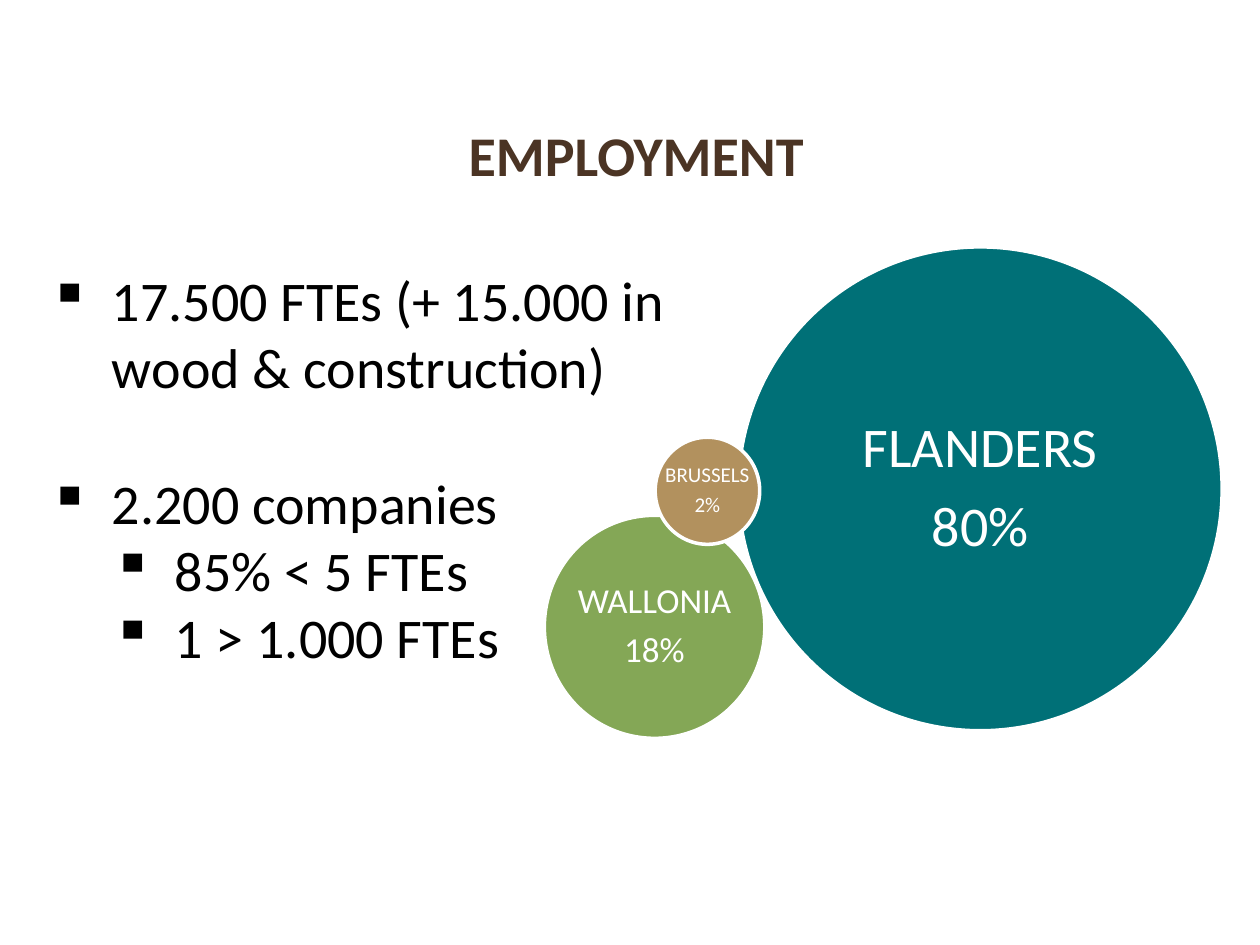
from pptx import Presentation
from pptx.dml.color import RGBColor
from pptx.enum.shapes import MSO_SHAPE
from pptx.enum.text import MSO_ANCHOR, PP_ALIGN
from pptx.oxml.ns import qn
from pptx.util import Inches, Pt
from lxml import etree

FONT = "Calibri"
WHITE, BLACK, BROWN = "FFFFFF", "000000", "4B3424"
TEAL, GREEN, TAN = "007077", "84A756", "B2915E"


def color(value):
    return RGBColor.from_string(value)


def add_text(p, text, size=32, fill=BLACK, bold=False, align=PP_ALIGN.LEFT,
             before=0, after=0, spacing=None):
    p.alignment = align
    p.space_before, p.space_after = Pt(before), Pt(after)
    if spacing:
        p.line_spacing = spacing
    r = p.add_run()
    r.text = text
    r.font.name, r.font.size, r.font.bold = FONT, Pt(size), bold
    r.font.color.rgb = color(fill)


def add_box(slide, box):
    tf = slide.shapes.add_textbox(*map(Inches, box)).text_frame
    tf.word_wrap = True
    return tf


def next_paragraph(tf, index):
    return tf.add_paragraph() if index else tf.paragraphs[0]


def set_bullet(p, level):
    p.level = level
    pPr = p._p.get_or_add_pPr()
    pPr.set("marL", str(Inches(0.5 * (level + 1))))
    pPr.set("indent", str(Inches(-0.5)))
    etree.SubElement(pPr, qn("a:buChar")).set("char", "▪")


def add_title(slide, box):
    tf = add_box(slide, box)
    tf.vertical_anchor = MSO_ANCHOR.MIDDLE
    add_text(tf.paragraphs[0], "EMPLOYMENT", fill=BROWN, bold=True,
             align=PP_ALIGN.CENTER)


def add_facts(slide, box):
    # text, level, space before
    facts = [
        ("17.500 FTEs (+ 15.000 in wood & construction)", 0, 0),
        ("2.200 companies", 0, 39),
        ("85% < 5 FTEs", 1, 0),
        ("1 > 1.000 FTEs", 1, 0),
    ]
    tf = add_box(slide, box)
    for i, (text, level, before) in enumerate(facts):
        p = next_paragraph(tf, i)
        set_bullet(p, level)
        add_text(p, text, before=before)


def add_region(slide, box, name, share, fill, size):
    sp = slide.shapes.add_shape(MSO_SHAPE.OVAL, *map(Inches, box))
    sp.shadow.inherit = False
    sp.fill.solid()
    sp.fill.fore_color.rgb = color(fill)
    sp.line.color.rgb = color(WHITE)
    sp.line.width = Pt(2)
    tf = sp.text_frame
    tf.word_wrap = False
    tf.vertical_anchor = MSO_ANCHOR.MIDDLE
    tf.margin_left = tf.margin_right = tf.margin_top = tf.margin_bottom = 0
    for i, text in enumerate((name, share)):
        add_text(next_paragraph(tf, i), text, size=size, fill=WHITE,
                 align=PP_ALIGN.CENTER, after=round(size * 0.33, 1), spacing=0.9)


def main():
    prs = Presentation()
    prs.slide_width, prs.slide_height = Inches(10), Inches(7.5)
    slide = prs.slides.add_slide(prs.slide_layouts[6])

    add_title(slide, (1, 0.77, 8.1, 0.9))

    # Circles per region, back to front
    add_region(slide, (5.86, 1.96, 3.84, 3.84), "FLANDERS", "80%", TEAL, 32)
    add_region(slide, (4.32, 4.09, 1.75, 1.77), "WALLONIA", "18%", GREEN, 20)
    add_region(slide, (5.2, 3.47, 0.83, 0.85), "BRUSSELS", "2%", TAN, 12)

    add_facts(slide, (0.29, 2.06, 5.99, 3.33))
    prs.save("out.pptx")


if __name__ == "__main__":
    main()
